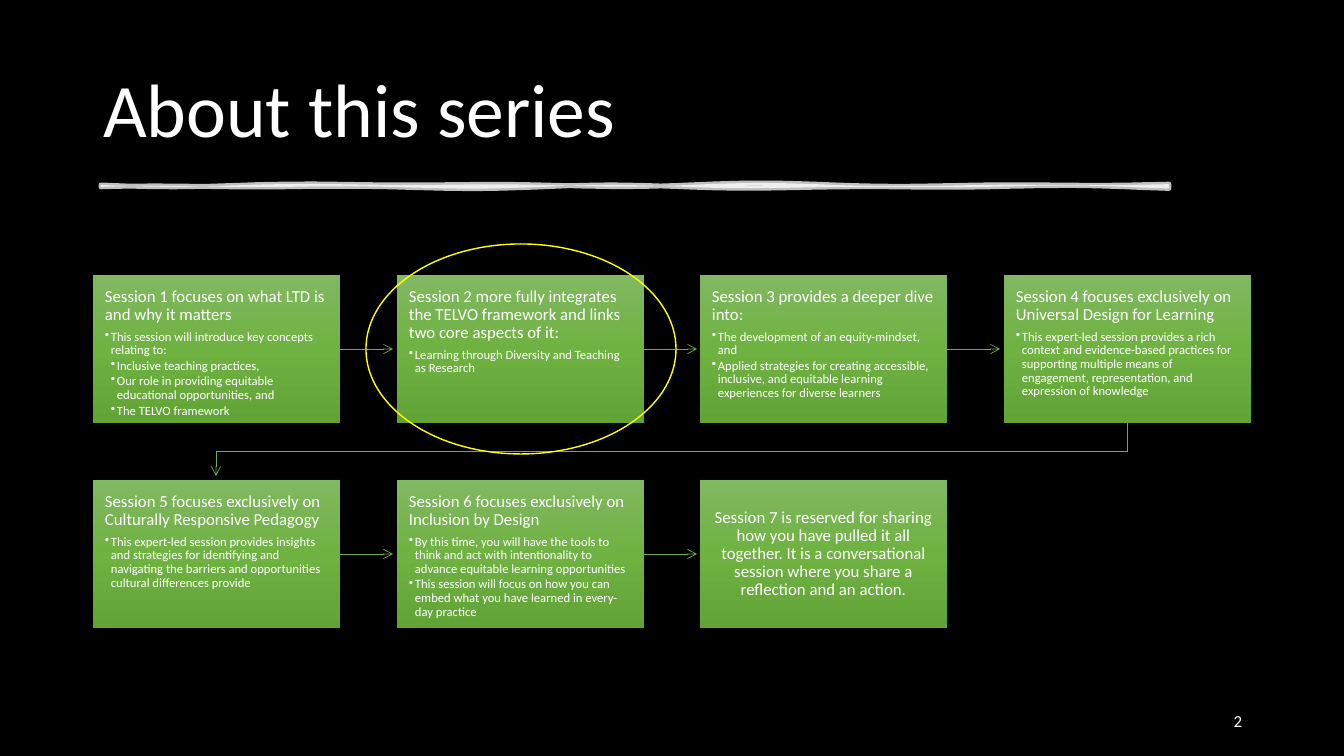
import copy
import math

import pptx
import pptx.dml.color
import pptx.enum.shapes
import pptx.enum.text
import pptx.oxml.ns
import pptx.util
from lxml import etree

PX = 12192000 / 1344
FONT = "Calibri"
COLORS = {"black": "000000", "white": "FFFFFF", "arrow": "70AD47", "ring": "FFFF00",
          "box_top": "81B861", "box_middle": "6FB242", "box_bottom": "62A336"}
BOX_W, BOX_H, ARROW_GAP = 247, 148, 4
ROW_TOPS = [275, 480]
COLUMNS = 4

SESSIONS = [
    ("Session 1 focuses on what LTD is and why it matters", [
        (1, "This session will introduce key concepts relating to:"),
        (2, "Inclusive teaching practices,"),
        (2, "Our role in providing equitable educational opportunities, and"),
        (2, "The TELVO framework")]),
    ("Session 2 more fully integrates the TELVO framework and links two core aspects of it:", [
        (1, "Learning through Diversity and Teaching as Research")]),
    ("Session 3 provides a deeper dive into:", [
        (1, "The development of an equity-mindset, and"),
        (1, "Applied strategies for creating accessible, inclusive, and equitable "
            "learning experiences for diverse learners")]),
    ("Session 4 focuses exclusively on Universal Design for Learning", [
        (1, "This expert-led session provides a rich context and evidence-based practices for "
            "supporting multiple means of engagement, representation, and expression of knowledge")]),
    ("Session 5 focuses exclusively on Culturally Responsive Pedagogy", [
        (1, "This expert-led session provides insights and strategies for identifying and "
            "navigating the barriers and opportunities cultural differences provide")]),
    ("Session 6 focuses exclusively on Inclusion by Design", [
        (1, "By this time, you will have the tools to think and act with intentionality to "
            "advance equitable learning opportunities"),
        (1, "This session will focus on how you can embed what you have learned in "
            "every-day practice")]),
    ("Session 7 is reserved for sharing how you have pulled it all together. It is a "
     "conversational session where you share a reflection and an action.", []),
]


def px(*lengths):
    """Turn px lengths into EMU."""
    return [round(n * PX) for n in lengths]


def rgb(name):
    """Look up a named colour."""
    return pptx.dml.color.RGBColor.from_string(COLORS[name])


def add_xml(parent, tag, **attributes):
    """Append a drawing element to its parent."""
    return etree.SubElement(parent, pptx.oxml.ns.qn(tag), attributes)


def format_paragraph(p, size, after=0, spacing=0.9, align=pptx.enum.text.PP_ALIGN.LEFT):
    """Set spacing, alignment and white type."""
    p.alignment, p.line_spacing = align, spacing
    p.space_before, p.space_after = pptx.util.Pt(0), pptx.util.Pt(after)
    for r in p.runs:
        r.font.name, r.font.size = FONT, pptx.util.Pt(size)
        r.font.color.rgb = rgb("white")


def add_bullet(p, level):
    """Give a paragraph a hanging bullet."""
    p.level = level
    pPr = p._p.get_or_add_pPr()
    indent = px(6)[0]
    pPr.set("marL", str(level * indent))
    pPr.set("indent", str(-indent))
    add_xml(pPr, "a:buChar", char="•")


def add_title(slide, x, y, w, h):
    """Place the slide title."""
    s = slide.shapes.title
    s.left, s.top, s.width, s.height = px(x, y, w, h)
    tf = s.text_frame
    tf.text = "About this series"
    tf.auto_size = pptx.enum.text.MSO_AUTO_SIZE.NONE
    tf.vertical_anchor = pptx.enum.text.MSO_ANCHOR.MIDDLE
    format_paragraph(tf.paragraphs[0], 54)


def add_brush_rule(slide, x, y, w, h):
    """Draw the uneven translucent stroke under the title."""
    def wave(t):
        return math.sin(t / 38) + math.sin(t / 61)

    steps = range(0, w + 1, 12)
    top = [((x + t) * 10, y * 10 + 10 * wave(t)) for t in steps]
    bottom = [((x + t) * 10, (y + h) * 10 + 10 * wave(t + 150)) for t in reversed(steps)]
    builder = slide.shapes.build_freeform(*top[0], scale=PX / 10)
    builder.add_line_segments(top[1:] + bottom, close=True)
    s = builder.convert_to_shape()
    s.shadow.inherit = False
    s.line.width = pptx.util.Pt(3.5)
    for fill in (s.fill, s.line.fill):
        fill.solid()
        fill.fore_color.rgb = rgb("white")
    for color in s._element.spPr.iter(pptx.oxml.ns.qn("a:srgbClr")):
        add_xml(color, "a:alpha", val="75000")


def add_session(slide, x, y, w, h, heading, bullets):
    """Draw one session box with its heading and bullets."""
    s = slide.shapes.add_shape(pptx.enum.shapes.MSO_SHAPE.RECTANGLE, *px(x, y, w, h))
    s.shadow.inherit = False
    s.line.fill.background()
    s.fill.gradient()
    s.fill.gradient_angle = 270
    first = s._element.spPr.find(".//" + pptx.oxml.ns.qn("a:gs"))
    first.addnext(copy.deepcopy(first))
    for i, stop in enumerate(s.fill.gradient_stops):
        stop.position = i / 2
        stop.color.rgb = rgb(["box_top", "box_middle", "box_bottom"][i])
    tf = s.text_frame
    tf.word_wrap = True
    tf.margin_left, tf.margin_right, tf.margin_top, tf.margin_bottom = px(12, 12, 13, 13)
    anchors, aligns = pptx.enum.text.MSO_ANCHOR, pptx.enum.text.PP_ALIGN
    tf.vertical_anchor = anchors.TOP if bullets else anchors.MIDDLE
    tf.text = heading
    format_paragraph(tf.paragraphs[0], 12, 4.2, align=aligns.LEFT if bullets else aligns.CENTER)
    for level, text in bullets:
        p = tf.add_paragraph()
        p.text = text
        format_paragraph(p, 9, 1.35)
        add_bullet(p, level)
    return s


def style_arrow(s):
    """Make a line thin and green with an open arrowhead."""
    s.line.width = pptx.util.Pt(0.5)
    s.line.color.rgb = rgb("arrow")
    add_xml(s.line._get_or_add_ln(), "a:tailEnd", type="arrow")


def add_row_arrow(slide, box, x, y, w):
    """Run an arrow from the right side of a box."""
    s = slide.shapes.add_connector(pptx.enum.shapes.MSO_CONNECTOR.STRAIGHT, *px(x, y, x + w, y))
    s.begin_connect(box, 3)
    style_arrow(s)
    add_xml(s._element.spPr, "a:effectLst")


def add_return_arrow(slide, x, y, w, h):
    """Run the bent arrow from the end of the first row to the second."""
    builder = slide.shapes.build_freeform(x + w, y, scale=PX)
    builder.add_line_segments([(x + w, y + 28), (x, y + 28), (x, y + h)], close=False)
    s = builder.convert_to_shape()
    s.shadow.inherit = False
    s.fill.background()
    style_arrow(s)


def add_session_flow(slide, x, w):
    """Lay out the sessions in rows and join them in order."""
    step = (w - BOX_W) / (COLUMNS - 1)
    for i, (heading, bullets) in enumerate(SESSIONS):
        row, column = divmod(i, COLUMNS)
        left, top = round(x + column * step), ROW_TOPS[row]
        box = add_session(slide, left, top, BOX_W, BOX_H, heading, bullets)
        if column < COLUMNS - 1 and i < len(SESSIONS) - 1:
            add_row_arrow(slide, box, left + BOX_W, top + BOX_H // 2,
                          round(step) - BOX_W - ARROW_GAP)
    bottom = ROW_TOPS[0] + BOX_H
    add_return_arrow(slide, x + BOX_W // 2, bottom, w - BOX_W,
                     ROW_TOPS[1] - bottom - ARROW_GAP)


def add_highlight(slide, x, y, w, h):
    """Ring the current session."""
    s = slide.shapes.add_shape(pptx.enum.shapes.MSO_SHAPE.OVAL, *px(x, y, w, h))
    s.shadow.inherit = False
    s.fill.background()
    s.line.color.rgb = rgb("ring")
    s.line.width = pptx.util.Pt(1)


def add_page_number(slide, x, y, w, h):
    """Write the page number at the lower right."""
    tf = slide.shapes.add_textbox(*px(x, y, w, h)).text_frame
    tf.word_wrap = True
    tf.vertical_anchor = pptx.enum.text.MSO_ANCHOR.MIDDLE
    tf.text = "2"
    format_paragraph(tf.paragraphs[0], 12, 6, 1.0, pptx.enum.text.PP_ALIGN.RIGHT)


def main():
    """Build and save the slide."""
    prs = pptx.Presentation()
    prs.slide_width, prs.slide_height = px(1344, 756)
    slide = prs.slides.add_slide(prs.slide_layouts[5])
    slide.background.fill.solid()
    slide.background.fill.fore_color.rgb = rgb("black")
    add_title(slide, 93, 40, 1159, 146)
    add_brush_rule(slide, 101, 185, 1068, 2)
    add_page_number(slide, 950, 701, 302, 40)
    add_session_flow(slide, 93, 1158)
    add_highlight(slide, 366, 244, 310, 210)
    prs.save("out.pptx")


if __name__ == "__main__":
    main()
